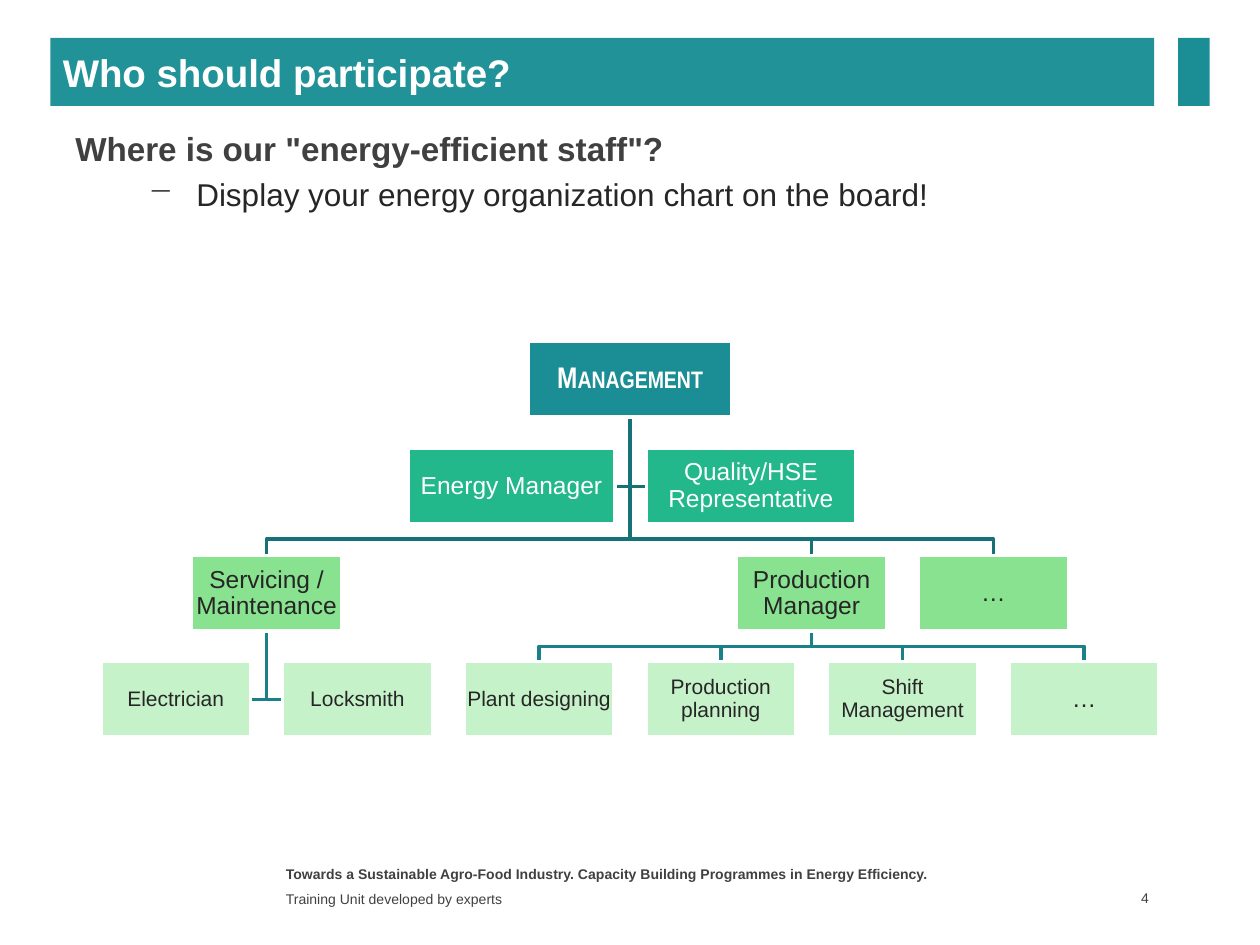
from dataclasses import dataclass

from lxml import etree
from pptx import Presentation
from pptx.dml.color import RGBColor
from pptx.enum.shapes import MSO_SHAPE
from pptx.enum.text import MSO_ANCHOR, PP_ALIGN
from pptx.oxml.ns import qn
from pptx.util import Inches, Pt

RECT = MSO_SHAPE.RECTANGLE
TOP, MIDDLE = MSO_ANCHOR.TOP, MSO_ANCHOR.MIDDLE
LEFT, CENTER, RIGHT = PP_ALIGN.LEFT, PP_ALIGN.CENTER, PP_ALIGN.RIGHT


@dataclass(frozen=True)
class Theme:
    font: str = "Arial"
    narrow: str = "Arial Narrow"
    white: str = "FFFFFF"
    dark: str = "262626"
    gray: str = "404040"
    banner: str = "209298"
    teal: str = "1B8E95"
    green: str = "22B88B"
    light: str = "88E28F"
    pale: str = "C6F2C9"
    upper_line: str = "167277"
    lower_line: str = "198187"
    title: int = 22
    heading: int = 19
    bullet: int = 18
    top_box: int = 17
    box: int = 14
    small_box: int = 12
    footer: int = 8
    line: int = 2


T = Theme()
BOX_W, BOX_H = 1.19, 0.6
COLUMN_X, COLUMN_STEP = 0.8, 1.442
STAFF_Y, MANAGER_Y, TEAM_Y = 3.56, 4.41, 5.25
TRUNK_X, TRUNK_Y = 5, 3.31
STAFF_LINE_Y, MANAGER_BAR_Y = 3.86, 4.28
MANAGER_BOTTOM, TEAM_BAR_Y = 5, 5.13


def rgb(value):
    return RGBColor.from_string(value)


def write(p, text, size, color, bold=False, font=T.font, align=LEFT, small_caps=False):
    p.alignment = align
    r = p.add_run()
    r.text = text
    r.font.name, r.font.size, r.font.bold = font, Pt(size), bold
    r.font.color.rgb = rgb(color)
    if small_caps:
        r.font._element.set("cap", "small")


def set_frame(tf, anchor, insets=(0.1, 0.05, 0.1, 0.05)):
    tf.word_wrap = True
    tf.vertical_anchor = anchor
    tf.margin_left, tf.margin_top, tf.margin_right, tf.margin_bottom = map(Inches, insets)


def add_rect(slide, x, y, w, h, fill, line=None):
    sp = slide.shapes.add_shape(RECT, Inches(x), Inches(y), Inches(w), Inches(h))
    sp.shadow.inherit = False
    sp.fill.solid()
    sp.fill.fore_color.rgb = rgb(fill)
    if line:
        sp.line.color.rgb = rgb(line)
        sp.line.width = Pt(T.line)
    else:
        sp.line.fill.background()
    return sp


def add_text(slide, x, y, w, h, text, anchor=MIDDLE, insets=(0.1, 0.05, 0.1, 0.05), **fmt):
    tf = slide.shapes.add_textbox(Inches(x), Inches(y), Inches(w), Inches(h)).text_frame
    set_frame(tf, anchor, insets)
    write(tf.paragraphs[0], text, **fmt)
    return tf


def add_bullet(tf, text, char, indent, hanging, **fmt):
    p = tf.add_paragraph()
    p.level = 1
    pPr = p._p.get_or_add_pPr()
    pPr.set("marL", str(Inches(indent)))
    pPr.set("indent", str(-Inches(hanging)))
    etree.SubElement(pPr, qn("a:buChar")).set("char", char)
    p.space_before = Pt(0.2 * fmt["size"])
    write(p, text, **fmt)


def add_box(slide, x, y, text, fill, w=BOX_W, size=T.box, color=T.dark, **fmt):
    tf = add_rect(slide, x, y, w, BOX_H, fill, T.white).text_frame
    set_frame(tf, MIDDLE, (0.01,) * 4)
    p = tf.paragraphs[0]
    p.line_spacing = 0.9
    write(p, text, size, color, align=CENTER, **fmt)


def add_path(slide, color, *points):
    start, *rest = [(Inches(x), Inches(y)) for x, y in points]
    builder = slide.shapes.build_freeform(*start)
    builder.add_line_segments(rest, close=False)
    sp = builder.convert_to_shape()
    sp.shadow.inherit = False
    sp.fill.background()
    sp.line.color.rgb = rgb(color)
    sp.line.width = Pt(T.line)


def column_x(column):
    return COLUMN_X + column * COLUMN_STEP


def center_x(column):
    return column_x(column) + BOX_W / 2


def add_lines(slide, manager_columns, team_columns):
    for x in (TRUNK_X + 0.13, TRUNK_X - 0.13):
        add_path(slide, T.upper_line, (TRUNK_X, TRUNK_Y), (TRUNK_X, STAFF_LINE_Y),
                 (x, STAFF_LINE_Y))
    for column in manager_columns:
        x = center_x(column)
        add_path(slide, T.upper_line, (TRUNK_X, TRUNK_Y), (TRUNK_X, MANAGER_BAR_Y),
                 (x, MANAGER_BAR_Y), (x, MANAGER_Y))
    production_x = center_x(manager_columns[1])
    for column in team_columns:
        x = center_x(column)
        add_path(slide, T.lower_line, (production_x, MANAGER_BOTTOM),
                 (production_x, TEAM_BAR_Y), (x, TEAM_BAR_Y), (x, TEAM_Y))
    servicing_x = center_x(manager_columns[0])
    side_y = TEAM_Y + BOX_H / 2
    for x in (column_x(0) + BOX_W, column_x(1)):
        add_path(slide, T.lower_line, (servicing_x, MANAGER_BOTTOM),
                 (servicing_x, side_y), (x, side_y))


def add_org_chart(slide):
    managers = {0.5: "Servicing / Maintenance", 3.5: "Production Manager", 4.5: "…"}
    team = ["Electrician", "Locksmith", "Plant designing", "Production planning",
            "Shift Management", "…"]
    add_lines(slide, list(managers), range(2, len(team)))
    add_box(slide, 4.19, 2.71, "Management", T.teal, w=1.62, size=T.top_box,
            color=T.white, bold=True, font=T.narrow, small_caps=True)
    add_box(slide, 3.24, STAFF_Y, "Energy Manager", T.green, w=1.64, color=T.white)
    add_box(slide, 5.13, STAFF_Y, "Quality/HSE Representative", T.green, w=1.66,
            color=T.white)
    for column, text in managers.items():
        add_box(slide, column_x(column), MANAGER_Y, text, T.light)
    for column, text in enumerate(team):
        size = T.box if text == "…" else T.small_box
        add_box(slide, column_x(column), TEAM_Y, text, T.pale, size=size)


def add_header(slide, text):
    tf = add_rect(slide, 0.4, 0.3, 8.76, 0.54, T.banner).text_frame
    set_frame(tf, MIDDLE)
    write(tf.paragraphs[0], text, T.title, T.white, bold=True)
    add_rect(slide, 9.35, 0.3, 0.25, 0.54, T.teal)


def add_footer(slide):
    fmt = dict(size=T.footer, color=T.gray)
    add_text(slide, 2.17, 6.82, 5.5, 0.21,
             "Towards a Sustainable Agro-Food Industry. "
             "Capacity Building Programmes in Energy Efficiency.",
             anchor=TOP, bold=True, **fmt)
    add_text(slide, 2.17, 7.04, 5.5, 0.19, "Training Unit developed by experts", **fmt)
    add_text(slide, 8.6, 7.03, 0.56, 0.2, "4", insets=(0.1, 0.05, 0.04, 0.05),
             align=RIGHT, **fmt)


def main():
    prs = Presentation()
    prs.slide_width, prs.slide_height = Inches(10), Inches(7.5)
    slide = prs.slides.add_slide(prs.slide_layouts[6])
    add_header(slide, "Who should participate?")
    tf = add_text(slide, 0.5, 0.97, 7, 0.78, 'Where is our "energy-efficient staff"?',
                  anchor=TOP, size=T.heading, color=T.gray, bold=True)
    add_bullet(tf, "Display your energy organization chart on the board!", "−",
               0.96, 0.38, size=T.bullet, color=T.dark)
    add_org_chart(slide)
    add_footer(slide)
    prs.save("out.pptx")


if __name__ == "__main__":
    main()
